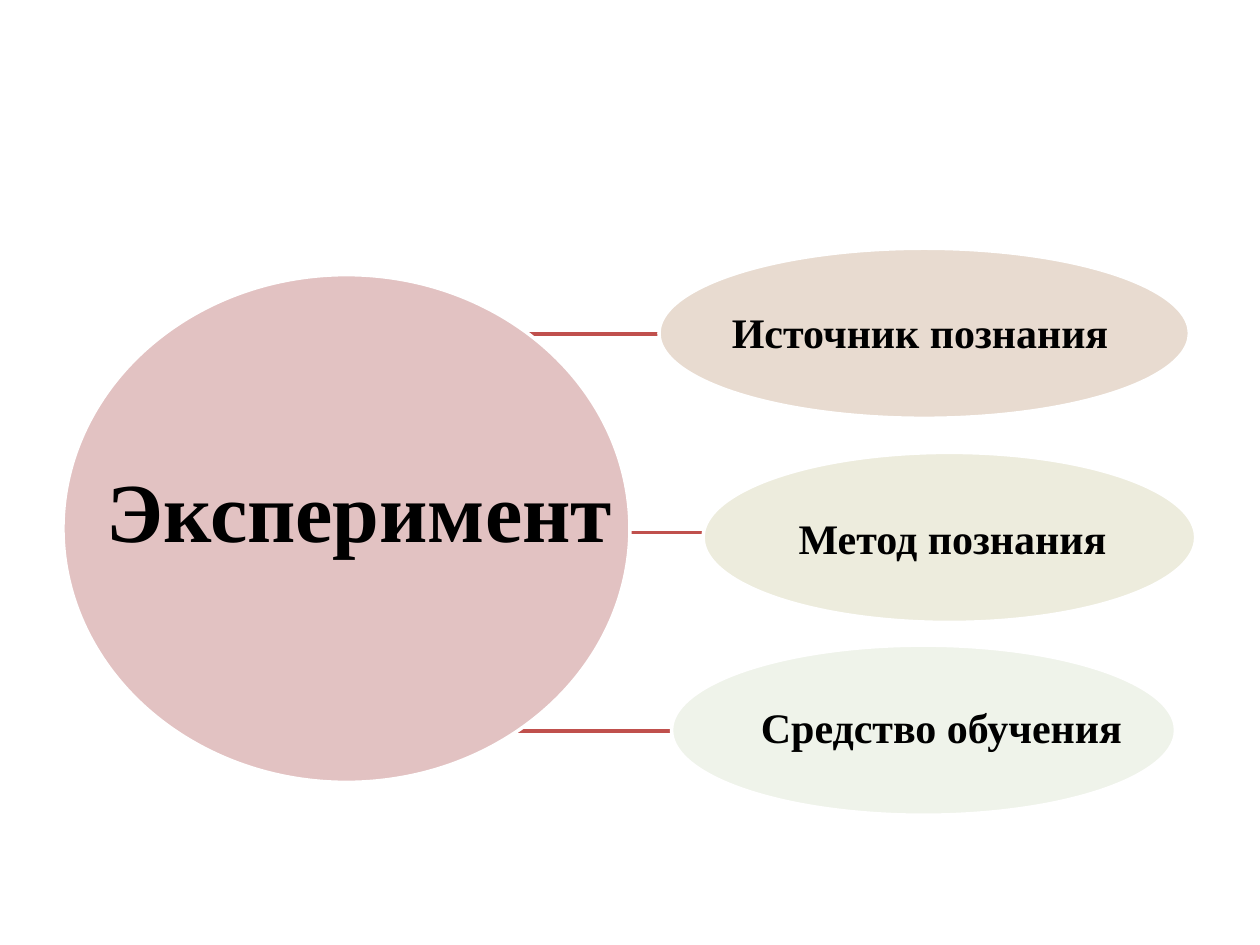
"""Build a slide that links an experiment to its three roles."""
from lxml.etree import SubElement
from pptx import Presentation
from pptx.dml.color import RGBColor
from pptx.enum.shapes import MSO_CONNECTOR, MSO_SHAPE
from pptx.enum.text import MSO_AUTO_SIZE
from pptx.oxml.ns import qn
from pptx.util import Inches, Pt

BLACK = RGBColor(0, 0, 0)
WHITE = RGBColor(255, 255, 255)
RED = RGBColor(0xC0, 0x50, 0x4D)
PINK = RGBColor(0xE2, 0xC2, 0xC2)
SAND = RGBColor(0xE8, 0xDB, 0xD0)
CREAM = RGBColor(0xED, 0xEC, 0xDD)
MINT = RGBColor(0xEF, 0xF3, 0xEA)
FONT = "Times New Roman"

HUB = (0.5, 2.18, 4.5, 4.03)
TITLE = ("Эксперимент", (0.75, 3.59, 4.25, 0.91))
ROLES = [
    ("Источник познания", (5.71, 2.38, 3.22, 0.5), (5.23, 1.97, 4.21, 1.35), SAND),
    ("Метод познания", (6.24, 4.02, 2.67, 0.5), (5.58, 3.59, 3.91, 1.35), CREAM),
    ("Средство обучения", (5.94, 5.52, 3.1, 0.5), (5.33, 5.12, 4, 1.35), MINT),
]
START, TOP, STEP = 2.81, 2.65, 1.575
ENDS = [7.33, 6.68, 7.33]


def add_link(slide, end, y):
    link = slide.shapes.add_connector(
        MSO_CONNECTOR.STRAIGHT, Inches(START), Inches(y), Inches(end), Inches(y))
    link.line.color.rgb = RED
    link.line.width = Pt(2)
    SubElement(link._element.spPr, qn("a:effectLst"))


def add_oval(slide, box, fill):
    oval = slide.shapes.add_shape(MSO_SHAPE.OVAL, *map(Inches, box))
    oval.shadow.inherit = False
    oval.fill.solid()
    oval.fill.fore_color.rgb = fill
    oval.line.color.rgb = WHITE
    oval.line.width = Pt(2)


def set_text(shape, text, size, wrap):
    frame = shape.text_frame
    frame.text = text
    frame.word_wrap = wrap
    frame.auto_size = MSO_AUTO_SIZE.SHAPE_TO_FIT_TEXT
    font = frame.paragraphs[0].runs[0].font
    font.name = FONT
    font.size = Pt(size)
    font.bold = True
    font.color.rgb = BLACK


def main():
    deck = Presentation()
    deck.slide_width, deck.slide_height = Inches(10), Inches(7.5)
    slide = deck.slides.add_slide(deck.slide_layouts[6])
    for row, end in enumerate(ENDS):
        add_link(slide, end, TOP + row * STEP)
    add_oval(slide, HUB, PINK)
    for _, _, oval, fill in ROLES:
        add_oval(slide, oval, fill)
    text, box = TITLE
    set_text(slide.shapes.add_textbox(*map(Inches, box)), text, 48, True)
    for text, box, _, _ in ROLES:
        set_text(slide.shapes.add_textbox(*map(Inches, box)), text, 24, False)
    deck.save("out.pptx")


if __name__ == "__main__":
    main()
